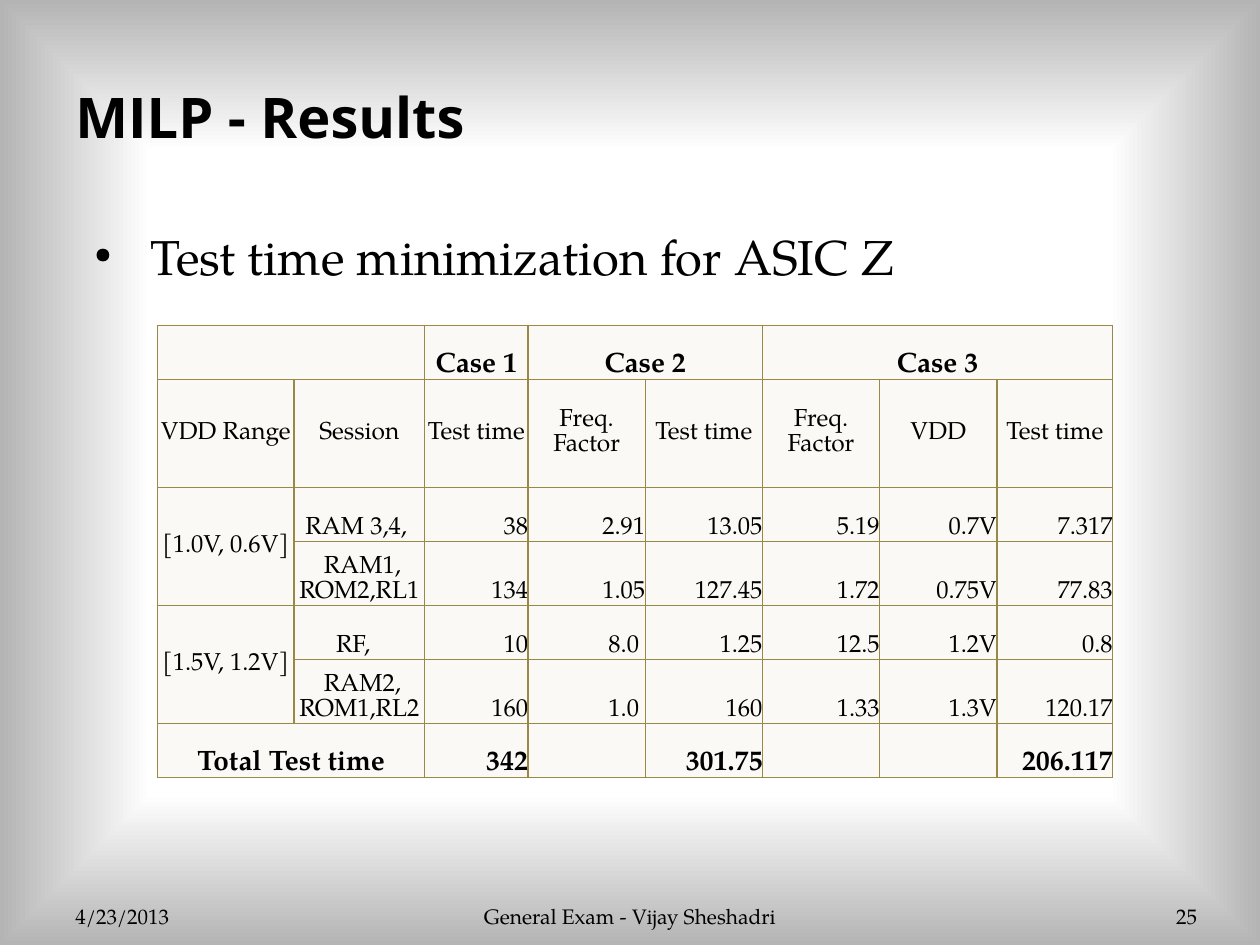
import pptx
import pptx.dml.color
import pptx.enum.text
import pptx.oxml
import pptx.oxml.ns
import pptx.util
from lxml import etree

Pt = pptx.util.Pt
ALIGN = pptx.enum.text.PP_ALIGN
ANCHOR = pptx.enum.text.MSO_ANCHOR
qn = pptx.oxml.ns.qn

SERIF = "TeX Gyre Pagella"
INK, CELL, GRID = "000000", "FAF9F5", "998946"

COLUMNS = [78, 74.8, 59, 67, 67, 67, 67, 66.2]
ROWS = [30.9, 61.8, 30.9, 36.5, 30.9, 36.5, 30.9]
RESULTS = [
    ["", "", "Case 1", "Case 2", "", "Case 3", "", ""],
    ["VDD Range", "Session", "Test time", "Freq. Factor", "Test time",
     "Freq. Factor", "VDD", "Test time"],
    ["[1.0V, 0.6V]", " RAM 3,4,  ", "38", " 2.91", "13.05", "5.19", "0.7V", "7.317"],
    ["", " RAM1, ROM2,RL1", "134", " 1.05", "127.45", "1.72", "0.75V", "77.83"],
    ["[1.5V, 1.2V]", " RF,   ", "10", " 8.0 ", "1.25", "12.5", "1.2V", "0.8"],
    ["", " RAM2, ROM1,RL2", "160", " 1.0 ", "160", "1.33", "1.3V", "120.17"],
    ["Total Test time", "", "342", "", "301.75", "", "", "206.117"],
]
# first row, first column, last row, last column
MERGES = [(0, 0, 0, 1), (0, 3, 0, 4), (0, 5, 0, 7),
          (2, 0, 3, 0), (4, 0, 5, 0), (6, 0, 6, 1)]


def color(value):
    return pptx.dml.color.RGBColor.from_string(value)


def style(para, size, font=SERIF, bold=False, align=ALIGN.LEFT):
    para.alignment = align
    para.font.size = Pt(size)
    para.font.name = font
    para.font.bold = bold
    para.font.color.rgb = color(INK)


def add_text(page, box, text, size, anchor, **look):
    frame = page.shapes.add_textbox(*map(Pt, box)).text_frame
    frame.word_wrap = True
    frame.vertical_anchor = anchor
    para = frame.paragraphs[0]
    para.text = text
    style(para, size, **look)
    return frame


def paint_background(page):
    """Fade from a white centre to grey edges."""
    fill = page.background.fill
    fill.gradient()
    for stop, position, value in zip(fill.gradient_stops, (0.68, 1), ("FFFFFF", "B4B4B4")):
        stop.position = position
        stop.color.rgb = color(value)
    gradient = page.element.find(".//" + qn("a:gradFill"))
    gradient.remove(gradient.find(qn("a:lin")))
    shade = etree.SubElement(gradient, qn("a:path"), {"path": "shape"})
    etree.SubElement(shade, qn("a:fillToRect"), dict.fromkeys("ltrb", "50000"))


def add_bullet(page, box, text):
    para = add_text(page, box, text, 28, ANCHOR.TOP).paragraphs[0]
    para.space_before = Pt(5.6)
    props = para._p.get_or_add_pPr()
    props.set("marL", str(Pt(43.2)))
    props.set("indent", str(Pt(-32.4)))
    bullet_color = etree.SubElement(props, qn("a:buClr"))
    etree.SubElement(bullet_color, qn("a:srgbClr"), {"val": INK})
    etree.SubElement(props, qn("a:buSzPct"), {"val": "65000"})
    etree.SubElement(props, qn("a:buFont"), {"typeface": SERIF})
    etree.SubElement(props, qn("a:buChar"), {"char": "•"})
    # Run defaults must follow the bullet settings.
    props.append(props.find(qn("a:defRPr")))


def outline(cell):
    props = cell._tc.get_or_add_tcPr()
    for side in ("lnL", "lnR", "lnT", "lnB"):
        line = etree.SubElement(props, qn("a:" + side), {"w": str(Pt(0.75))})
        solid = etree.SubElement(line, qn("a:solidFill"))
        etree.SubElement(solid, qn("a:srgbClr"), {"val": GRID})


def fill_cell(cell, row, column, text):
    outline(cell)
    cell.fill.solid()
    cell.fill.fore_color.rgb = color(CELL)
    cell.margin_left = cell.margin_right = cell.margin_top = cell.margin_bottom = 0
    middle = row == 1 or (column == 0 and 2 <= row <= 5)
    cell.vertical_anchor = ANCHOR.MIDDLE if middle else ANCHOR.BOTTOM
    cell.text = text
    strong = row in (0, len(ROWS) - 1)
    centred = row < 2 or column < 2
    style(cell.text_frame.paragraphs[0], 16 if strong else 14, bold=strong,
          align=ALIGN.CENTER if centred else ALIGN.RIGHT)


def add_results(page, left, top):
    table = page.shapes.add_table(len(ROWS), len(COLUMNS), Pt(left), Pt(top),
                                  Pt(sum(COLUMNS)), Pt(sum(ROWS))).table
    table.first_row = table.horz_banding = False
    for column, width in zip(table.columns, COLUMNS):
        column.width = Pt(width)
    for row, height in zip(table.rows, ROWS):
        row.height = Pt(height)
    for r, values in enumerate(RESULTS):
        for c, text in enumerate(values):
            fill_cell(table.cell(r, c), r, c, text)
    for top_row, first, bottom_row, last in MERGES:
        table.cell(top_row, first).merge(table.cell(bottom_row, last))


def add_footer(page, left, top, width, height):
    add_text(page, (left, top, 168, height), "4/23/2013", 12, ANCHOR.BOTTOM)
    add_text(page, (left + (width - 228) / 2, top, 228, height),
             "General Exam - Vijay Sheshadri", 12, ANCHOR.BOTTOM, align=ALIGN.CENTER)
    number = add_text(page, (left + width - 60, top, 60, height), "25", 12,
                      ANCHOR.BOTTOM, align=ALIGN.RIGHT)
    number.margin_left = number.margin_right = 0


def main():
    deck = pptx.Presentation()
    deck.slide_width, deck.slide_height = Pt(720), Pt(540)
    page = deck.slides.add_slide(deck.slide_layouts[6])
    paint_background(page)
    add_text(page, (36, 21.6, 648, 90), "MILP - Results", 32, ANCHOR.MIDDLE,
             font="Open Sans", bold=True)
    add_bullet(page, (36, 126, 648, 371), "Test time minimization for ASIC Z")
    add_results(page, 90, 186)
    add_footer(page, 36, 505.5, 648, 28.8)
    deck.save("out.pptx")


if __name__ == "__main__":
    main()
